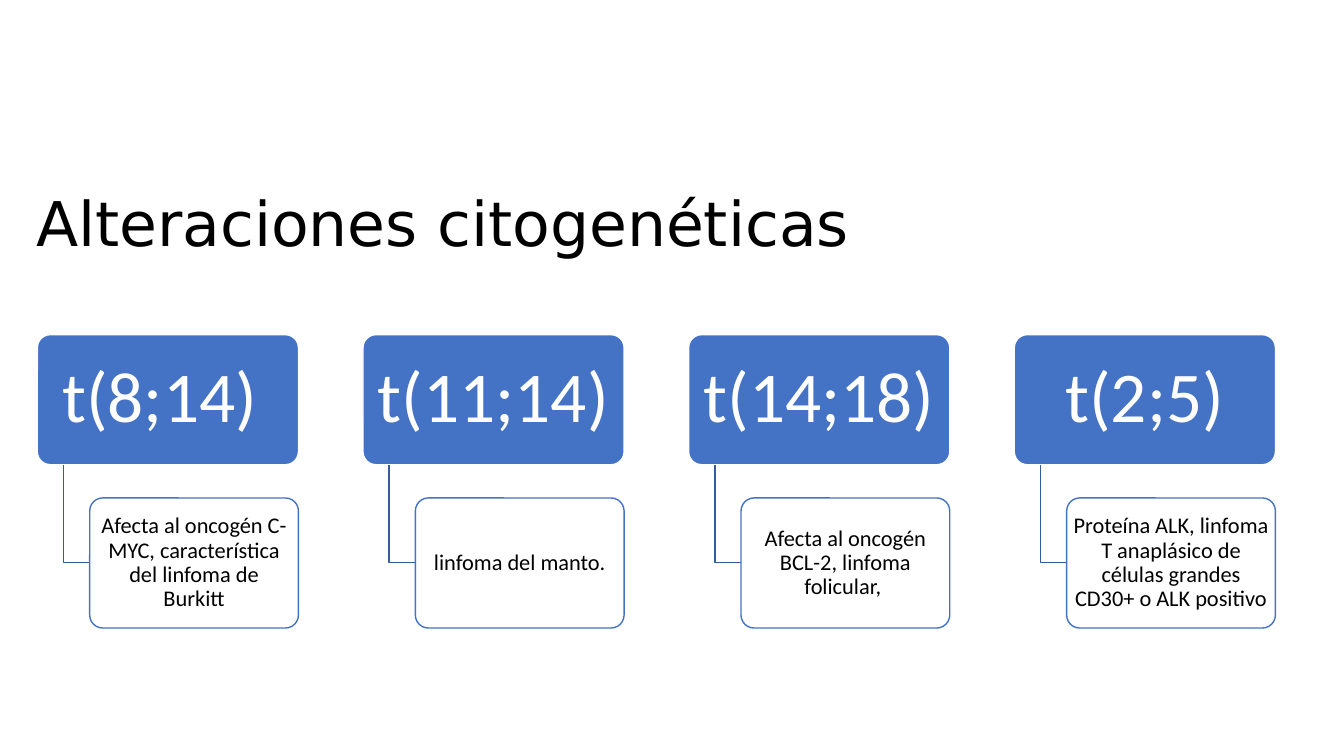
import pptx
import pptx.dml.color
import pptx.enum.shapes
import pptx.enum.text
import pptx.oxml
import pptx.util

PX = 9144
BLUE = pptx.dml.color.RGBColor(0x44, 0x72, 0xC4)
DARK_BLUE = pptx.dml.color.RGBColor(0x36, 0x5B, 0x9D)
WHITE = pptx.dml.color.RGBColor(0xFF, 0xFF, 0xFF)
BLACK = pptx.dml.color.RGBColor(0x00, 0x00, 0x00)
CENTER = pptx.enum.text.PP_ALIGN.CENTER
LEFT = pptx.enum.text.PP_ALIGN.LEFT
ROUNDED = pptx.enum.shapes.MSO_SHAPE.ROUNDED_RECTANGLE

FIRST_LEFT, COLUMN_STEP = 37, 323
HEAD_TOP, HEAD_WIDTH, BOX_HEIGHT = 332, 259, 129
DETAIL_TOP, DETAIL_WIDTH, DETAIL_INDENT = 494, 207, 52
BRANCH_INDENT = 26

ALTERATIONS = [
    ("t(8;14) ", "Afecta al oncogén C-MYC, característica del linfoma de Burkitt"),
    ("t(11;14)", "linfoma del manto."),
    ("t(14;18)", "Afecta al oncogén BCL-2, linfoma folicular, "),
    ("t(2;5)", "Proteína ALK, linfoma T anaplásico de células grandes CD30+ o ALK positivo"),
]


def write_text(box, text, font_name, size, color, alignment, side, edge):
    frame = box.text_frame
    layout = {
        "word_wrap": True,
        "vertical_anchor": pptx.enum.text.MSO_ANCHOR.MIDDLE,
        "margin_left": side * PX,
        "margin_right": side * PX,
        "margin_top": edge * PX,
        "margin_bottom": edge * PX,
    }
    for name, value in layout.items():
        setattr(frame, name, value)
    para = frame.paragraphs[0]
    para.alignment = alignment
    para.line_spacing = 0.9
    span = para.add_run()
    span.text = text
    for name, value in {"name": font_name, "size": pptx.util.Pt(size)}.items():
        setattr(span.font, name, value)
    span.font.color.rgb = color


def add_box(left, top, width, fill, line):
    box = page.shapes.add_shape(ROUNDED, left * PX, top * PX, width * PX, BOX_HEIGHT * PX)
    box.shadow.inherit = False
    box.adjustments[0] = 0.1
    box.fill.solid()
    box.fill.fore_color.rgb = fill
    box.line.color.rgb = line
    box.line.width = pptx.util.Pt(1)
    return box


deck = pptx.Presentation()
deck.slide_width = 1333 * PX
deck.slide_height = 750 * PX
page = deck.slides.add_slide(deck.slide_layouts[6])

title = page.shapes.add_textbox(26 * PX, 152 * PX, 847 * PX, 145 * PX)
write_text(title, "Alteraciones citogenéticas", "DejaVu Sans", 44, BLACK, LEFT, 10, 5)

for column, (translocation, meaning) in enumerate(ALTERATIONS):
    left = FIRST_LEFT + column * COLUMN_STEP
    detail_left = left + DETAIL_INDENT
    branch_left = left + BRANCH_INDENT
    detail_middle = DETAIL_TOP + BOX_HEIGHT // 2

    head = add_box(left, HEAD_TOP, HEAD_WIDTH, BLUE, WHITE)
    write_text(head, translocation, "Calibri", 51, WHITE, CENTER, 11, 7)

    outline = page.shapes.build_freeform(branch_left, HEAD_TOP + BOX_HEIGHT, scale=PX)
    outline.add_line_segments(
        [(branch_left, detail_middle), (detail_left, detail_middle)], close=False
    )
    branch = outline.convert_to_shape()
    branch.shadow.inherit = False
    branch.fill.background()
    branch.line.color.rgb = DARK_BLUE
    branch.line.width = pptx.util.Pt(1)

    detail = add_box(detail_left, DETAIL_TOP, DETAIL_WIDTH, WHITE, BLUE)
    fill_color = detail.element.spPr.find(pptx.oxml.ns.qn("a:solidFill"))[0]
    alpha = fill_color.makeelement(pptx.oxml.ns.qn("a:alpha"), {"val": "90000"})
    fill_color.append(alpha)
    write_text(detail, meaning, "Calibri", 16, BLACK, CENTER, 3, 2)

deck.save("out.pptx")
